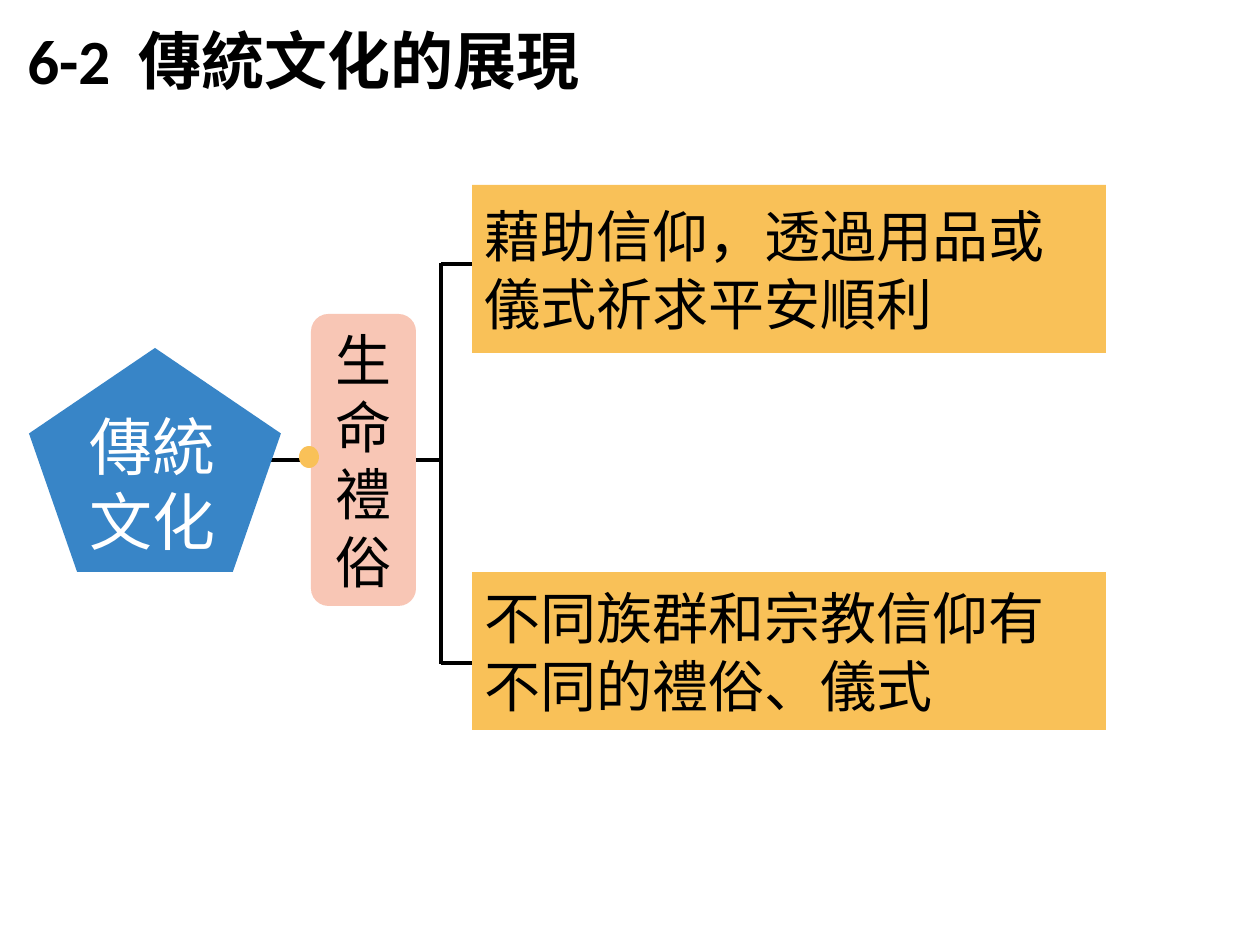
import pptx
import pptx.dml.color
import pptx.enum.shapes
import pptx.enum.text
import pptx.oxml.ns
import pptx.util
from lxml import etree

EMU_PER_PX = 914400 / 126
COLORS = {
    "black": "000000",
    "white": "FFFFFF",
    "amber": "F9C158",
    "pink": "F8C6B5",
    "blue": "3885C7",
}
CJK_FONT = "Noto Sans CJK SC"
SHAPES = pptx.enum.shapes.MSO_SHAPE
ANCHORS = pptx.enum.text.MSO_ANCHOR
ALIGNS = pptx.enum.text.PP_ALIGN


def px(length):
    return pptx.util.Emu(round(length * EMU_PER_PX))


def color(name):
    return pptx.dml.color.RGBColor.from_string(COLORS[name])


def add_span(para, text, size, ink, font=CJK_FONT, bold=False):
    span = para.add_run()
    span.text = text
    span.font.size = pptx.util.Pt(size)
    span.font.name = font
    span.font.bold = bold
    span.font.color.rgb = color(ink)
    east_asian = etree.SubElement(span._r.get_or_add_rPr(), pptx.oxml.ns.qn("a:ea"))
    east_asian.set("typeface", font)
    para.line_spacing = pptx.util.Pt(round(size * 1.2, 1))
    return span


def add_block(page, kind, box, fill):
    shape = page.shapes.add_shape(kind, *map(px, box))
    shape.shadow.inherit = False
    shape.fill.solid()
    shape.fill.fore_color.rgb = color(fill)
    shape.line.fill.background()
    return shape


def add_label(shape, text, size, ink, align=ALIGNS.LEFT, anchor=ANCHORS.MIDDLE):
    frame = shape.text_frame
    frame.word_wrap = True
    frame.vertical_anchor = anchor
    para = frame.paragraphs[0]
    para.alignment = align
    add_span(para, text, size, ink)


def add_line(page, start, end):
    line = page.shapes.add_connector(
        pptx.enum.shapes.MSO_CONNECTOR.STRAIGHT, *map(px, start + end))
    line.line.color.rgb = color("black")
    line.line.width = pptx.util.Pt(2.25)
    etree.SubElement(line._element.spPr, pptx.oxml.ns.qn("a:effectLst"))
    return line


def add_title(page, box):
    frame = page.shapes.add_textbox(*map(px, box)).text_frame
    frame.word_wrap = False
    para = frame.paragraphs[0]
    add_span(para, "6-2", 36, "black", "Calibri", True)
    # One widened space sets the number apart from the heading
    space = add_span(para, " ", 36, "black", "Calibri", True)
    space._r.get_or_add_rPr().set("spc", "800")
    add_span(para, "傳統文化的展現", 36, "black", bold=True)


def add_tree(page, box):
    left, top, width, height = box
    middle = top + 275
    trunk = left + 412
    leaf_left, leaf_width = left + 443, width - 443

    # Bracket: trunk and one branch per leaf
    branches = (top + 79, top + 478)
    add_line(page, (trunk, branches[0] - 1), (trunk, branches[1] + 1))
    for y in branches:
        add_line(page, (trunk, y), (leaf_left, y))
    root_link = add_line(page, (left + 227, middle), (left + 282, middle))
    stem = add_line(page, (left + 387, middle), (trunk, middle))

    # Topic in the middle
    topic = add_block(page, SHAPES.ROUNDED_RECTANGLE,
                      (left + 282, middle - 146, 105, 292), "pink")
    add_label(topic, "生命禮俗", 32, "black", ALIGNS.CENTER)
    root_link.end_connect(topic, 1)
    stem.begin_connect(topic, 3)
    add_block(page, SHAPES.OVAL, (left + 270, middle - 14, 20, 22), "amber")

    # Root
    root = add_block(page, SHAPES.REGULAR_PENTAGON,
                     (left, top + 163, 252, 224), "blue")
    add_label(root, "傳統文化", 36, "white", anchor=ANCHORS.TOP)

    # Leaves
    leaves = (
        (top, 168, "藉助信仰，透過用品或儀式祈求平安順利"),
        (top + height - 158, 158, "不同族群和宗教信仰有不同的禮俗、儀式"),
    )
    for leaf_top, leaf_height, text in leaves:
        leaf = add_block(page, SHAPES.RECTANGLE,
                         (leaf_left, leaf_top, leaf_width, leaf_height), "amber")
        add_label(leaf, text, 32, "black")


def main():
    deck = pptx.Presentation()
    deck.slide_width = px(1260)
    deck.slide_height = px(945)
    page = deck.slides.add_slide(deck.slide_layouts[6])
    add_title(page, (15, 15, 580, 89))
    add_tree(page, (29, 185, 1077, 545))
    deck.save("out.pptx")


if __name__ == "__main__":
    main()
